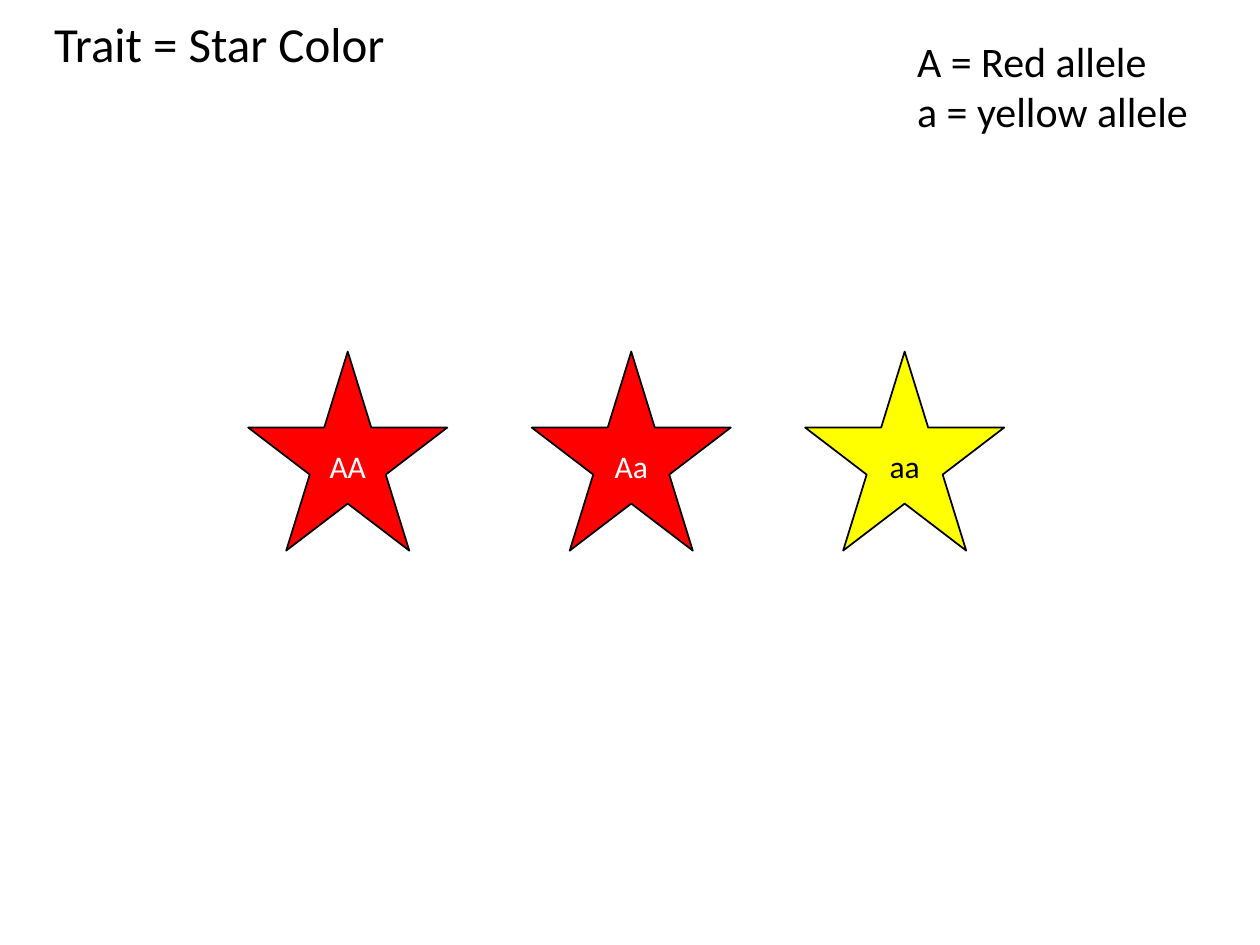
import pptx
import pptx.util
import pptx.dml.color
import pptx.enum.shapes
import pptx.enum.text

Inches, Pt = pptx.util.Inches, pptx.util.Pt
ALIGN, ANCHOR = pptx.enum.text.PP_ALIGN, pptx.enum.text.MSO_ANCHOR

COLORS = {"red": "FF0000", "yellow": "FFFF00", "black": "000000", "white": "FFFFFF"}
FONT = "Calibri"

TRAIT = "Trait = Star Color"
ALLELES = ["A = Red allele", "a = yellow allele"]
# genotype, left edge, star colour, label colour
GENOTYPES = [
    ("AA", 1.97, "red", "white"),
    ("Aa", 4.22, "red", "white"),
    ("aa", 6.39, "yellow", "black"),
]
STAR_TOP, STAR_SIZE = 2.79, 1.58


def rgb(name):
    return pptx.dml.color.RGBColor.from_string(COLORS[name])


def write(shape, text, size, color, align, anchor):
    frame = shape.text_frame
    frame.text = text
    frame.word_wrap = True
    frame.vertical_anchor = anchor
    for paragraph in frame.paragraphs:
        paragraph.alignment = align
        for run in paragraph.runs:
            run.font.name = FONT
            run.font.size = Pt(size)
            run.font.color.rgb = rgb(color)


presentation = pptx.Presentation()
presentation.slide_width, presentation.slide_height = Inches(10), Inches(7.5)
slide = presentation.slides.add_slide(presentation.slide_layouts[5])

trait = slide.shapes.title
trait.left, trait.top = Inches(0.33), Inches(0.11)
trait.width, trait.height = Inches(8.62), Inches(4.76)
write(trait, TRAIT, 28, "black", ALIGN.LEFT, ANCHOR.TOP)
trait.text_frame.auto_size = pptx.enum.text.MSO_AUTO_SIZE.NONE
trait.text_frame.paragraphs[0].line_spacing = 0.9

for genotype, left, star_color, label_color in GENOTYPES:
    star = slide.shapes.add_shape(
        pptx.enum.shapes.MSO_SHAPE.STAR_5_POINT,
        Inches(left), Inches(STAR_TOP), Inches(STAR_SIZE), Inches(STAR_SIZE))
    star.shadow.inherit = False
    star.fill.solid()
    star.fill.fore_color.rgb = rgb(star_color)
    star.line.color.rgb = rgb("black")
    star.line.width = Pt(1)
    write(star, genotype, 18, label_color, ALIGN.CENTER, ANCHOR.MIDDLE)

legend = slide.shapes.add_textbox(Inches(7.18), Inches(0.23), Inches(2.96), Inches(0.91))
write(legend, "\n".join(ALLELES), 24, "black", ALIGN.LEFT, ANCHOR.TOP)
legend.text_frame.auto_size = pptx.enum.text.MSO_AUTO_SIZE.SHAPE_TO_FIT_TEXT

presentation.save("out.pptx")
